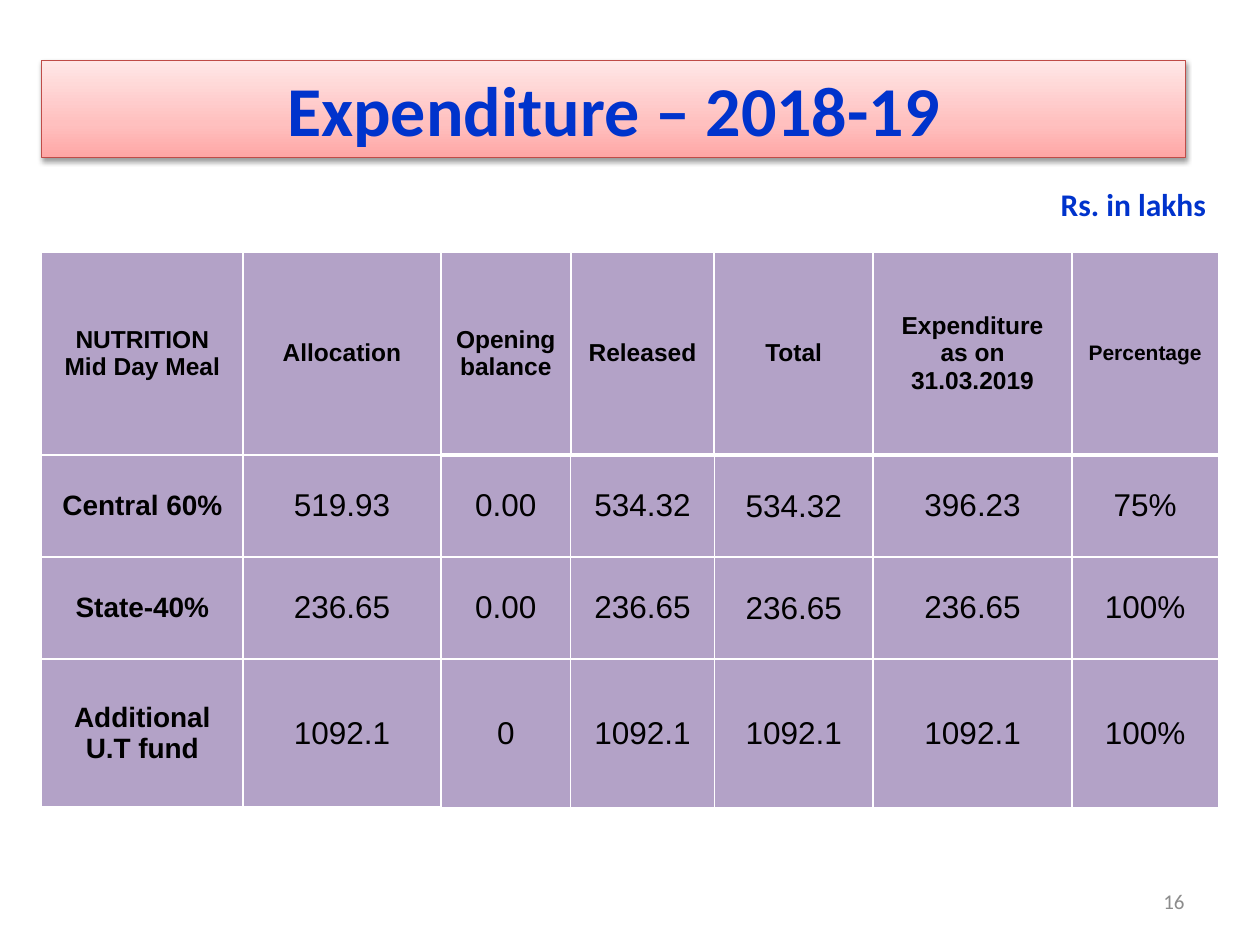
from typing import NamedTuple

from pptx import Presentation
from pptx.dml.color import RGBColor
from pptx.enum.shapes import MSO_SHAPE
from pptx.enum.text import MSO_ANCHOR, PP_ALIGN
from pptx.oxml import parse_xml
from pptx.oxml.ns import nsdecls
from pptx.util import Inches, Pt

COLORS = {
    "blue": "0033CC",
    "black": "000000",
    "grey": "8C8C8C",
    "white": "FFFFFF",
    "lilac": "B3A2C7",
    "red": "BF4C48",
    "pink_dark": "FFA6A5",
    "pink": "FFC0BF",
    "pink_light": "FFE7E7",
}


class Style(NamedTuple):
    size: int
    color: str
    bold: bool = False
    font: str = "Arial"
    align: PP_ALIGN = PP_ALIGN.CENTER


class Box(NamedTuple):
    left: float
    top: float
    width: float
    height: float


TITLE = Style(40, "blue", True, "Calibri")
UNIT = Style(18, "blue", True, "Calibri", PP_ALIGN.LEFT)
PAGE_NUMBER = Style(12, "grey", False, "Calibri", PP_ALIGN.RIGHT)
HEADER = Style(14, "black", True)
SMALL_HEADER = Style(12, "black", True)
ROW_LABEL = Style(16, "black", True)
VALUE = Style(18, "black")

COLUMN_WIDTHS = [1.6, 1.57, 1.03, 1.14, 1.26, 1.58, 1.16]
ROW_HEIGHTS = [1.61, 0.81, 0.81, 1.18]
TOTAL_COLUMN = 4
ROWS = [
    ["NUTRITION\nMid Day Meal", "Allocation", "Opening balance", "Released", "Total",
     "Expenditure as on 31.03.2019", "Percentage"],
    ["Central 60%", "519.93", "0.00", "534.32", "534.32", "396.23", "75%"],
    ["State-40%", "236.65", "0.00", "236.65", "236.65", "236.65", "100%"],
    ["Additional U.T fund", "1092.1", "0", "1092.1", "1092.1", "1092.1", "100%"],
]


def rgb(name: str) -> RGBColor:
    return RGBColor.from_string(COLORS[name])


def write(text_frame, text: str, style: Style) -> None:
    for index, line in enumerate(text.split("\n")):
        paragraph = text_frame.paragraphs[0] if index == 0 else text_frame.add_paragraph()
        paragraph.alignment = style.align
        run = paragraph.add_run()
        run.text = line
        run.font.size = Pt(style.size)
        run.font.bold = style.bold
        run.font.name = style.font
        run.font.color.rgb = rgb(style.color)


def add_text(slide, box: Box, text: str, style: Style, wrap: bool) -> None:
    text_box = slide.shapes.add_textbox(*map(Inches, box))
    text_box.text_frame.word_wrap = wrap
    text_box.text_frame.vertical_anchor = MSO_ANCHOR.MIDDLE
    write(text_box.text_frame, text, style)


def add_banner(slide, box: Box, text: str) -> None:
    """Draw the title bar with its three-stop gradient and soft shadow."""
    shape = slide.shapes.add_shape(MSO_SHAPE.RECTANGLE, *map(Inches, box))
    shape.fill.gradient()
    shape.fill.gradient_angle = 90
    first, last = shape.fill.gradient_stops
    first.position, last.position = 0, 1
    first.color.rgb, last.color.rgb = rgb("pink_dark"), rgb("pink_light")
    stops = shape.element.spPr.find(".//{*}gsLst")
    stops.insert(1, parse_xml(
        f'<a:gs {nsdecls("a")} pos="35000"><a:srgbClr val="{COLORS["pink"]}"/></a:gs>'))
    shape.line.color.rgb = rgb("red")
    shape.line.width = Pt(0.75)
    shape.element.spPr.append(parse_xml(
        f'<a:effectLst {nsdecls("a")}><a:outerShdw blurRad="{Pt(3.1)}" dist="{Pt(1.6)}" '
        f'dir="5400000" rotWithShape="0"><a:srgbClr val="{COLORS["black"]}">'
        '<a:alpha val="38000"/></a:srgbClr></a:outerShdw></a:effectLst>'))
    shape.text_frame.word_wrap = True
    shape.text_frame.vertical_anchor = MSO_ANCHOR.MIDDLE
    write(shape.text_frame, text, TITLE)


def vertical_border(edge: int, row: int) -> float:
    """Width in points of the border at the left of column number edge."""
    inner = 0 < edge < len(COLUMN_WIDTHS)
    return 1.5 if inner and (row == 0 or edge == 1) else 1


def horizontal_border(edge: int, column: int) -> float:
    """Width in points of the border above row number edge."""
    if edge == 0:
        return 1
    if column < 2:
        return 1.5
    return 3 if edge == 1 else 1


def set_borders(cell, row: int, column: int) -> None:
    widths = {
        "lnL": vertical_border(column, row),
        "lnR": vertical_border(column + 1, row),
        "lnT": horizontal_border(row, column),
        "lnB": horizontal_border(row + 1, column),
    }
    properties = cell._tc.get_or_add_tcPr()
    for index, (side, width) in enumerate(widths.items()):
        properties.insert(index, parse_xml(
            f'<a:{side} {nsdecls("a")} w="{Pt(width)}"><a:solidFill>'
            f'<a:srgbClr val="{COLORS["white"]}"/></a:solidFill></a:{side}>'))


def cell_style(row: int, column: int) -> Style:
    if row == 0:
        return SMALL_HEADER if column == len(COLUMN_WIDTHS) - 1 else HEADER
    return ROW_LABEL if column == 0 else VALUE


def add_expenditure_table(slide, left: float, top: float) -> None:
    box = Box(left, top, sum(COLUMN_WIDTHS), sum(ROW_HEIGHTS))
    table = slide.shapes.add_table(
        len(ROW_HEIGHTS), len(COLUMN_WIDTHS), *map(Inches, box)).table
    for column, width in zip(table.columns, COLUMN_WIDTHS):
        column.width = Inches(width)
    for row, height in zip(table.rows, ROW_HEIGHTS):
        row.height = Inches(height)
    for row, texts in enumerate(ROWS):
        for column, text in enumerate(texts):
            cell = table.cell(row, column)
            cell.fill.solid()
            cell.fill.fore_color.rgb = rgb("lilac")
            cell.vertical_anchor = MSO_ANCHOR.MIDDLE
            if row > 0 and column == TOTAL_COLUMN:
                cell.margin_left = cell.margin_right = cell.margin_top = Inches(0.01)
                cell.margin_bottom = 0
            set_borders(cell, row, column)
            write(cell.text_frame, text, cell_style(row, column))


def main() -> None:
    presentation = Presentation()
    presentation.slide_width = Inches(10)
    presentation.slide_height = Inches(7.5)
    slide = presentation.slides.add_slide(presentation.slide_layouts[6])
    add_banner(slide, Box(0.33, 0.48, 9.08, 0.77), "Expenditure – 2018-19")
    add_expenditure_table(slide, 0.33, 2)
    add_text(slide, Box(8.32, 1.42, 1.36, 0.4), "Rs. in lakhs", UNIT, wrap=False)
    add_text(slide, Box(7.17, 6.95, 2.33, 0.4), "16", PAGE_NUMBER, wrap=True)
    presentation.save("out.pptx")


if __name__ == "__main__":
    main()
